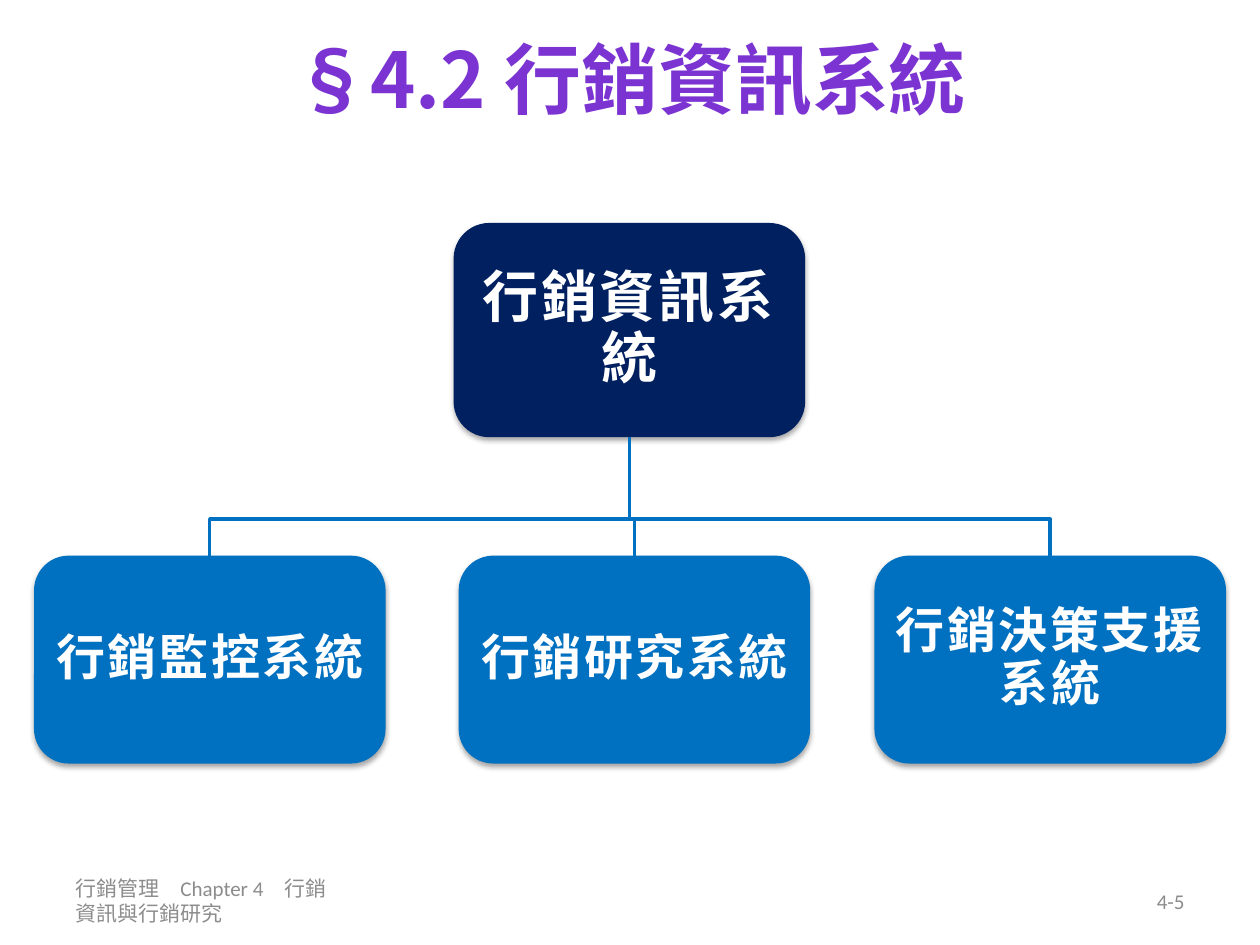
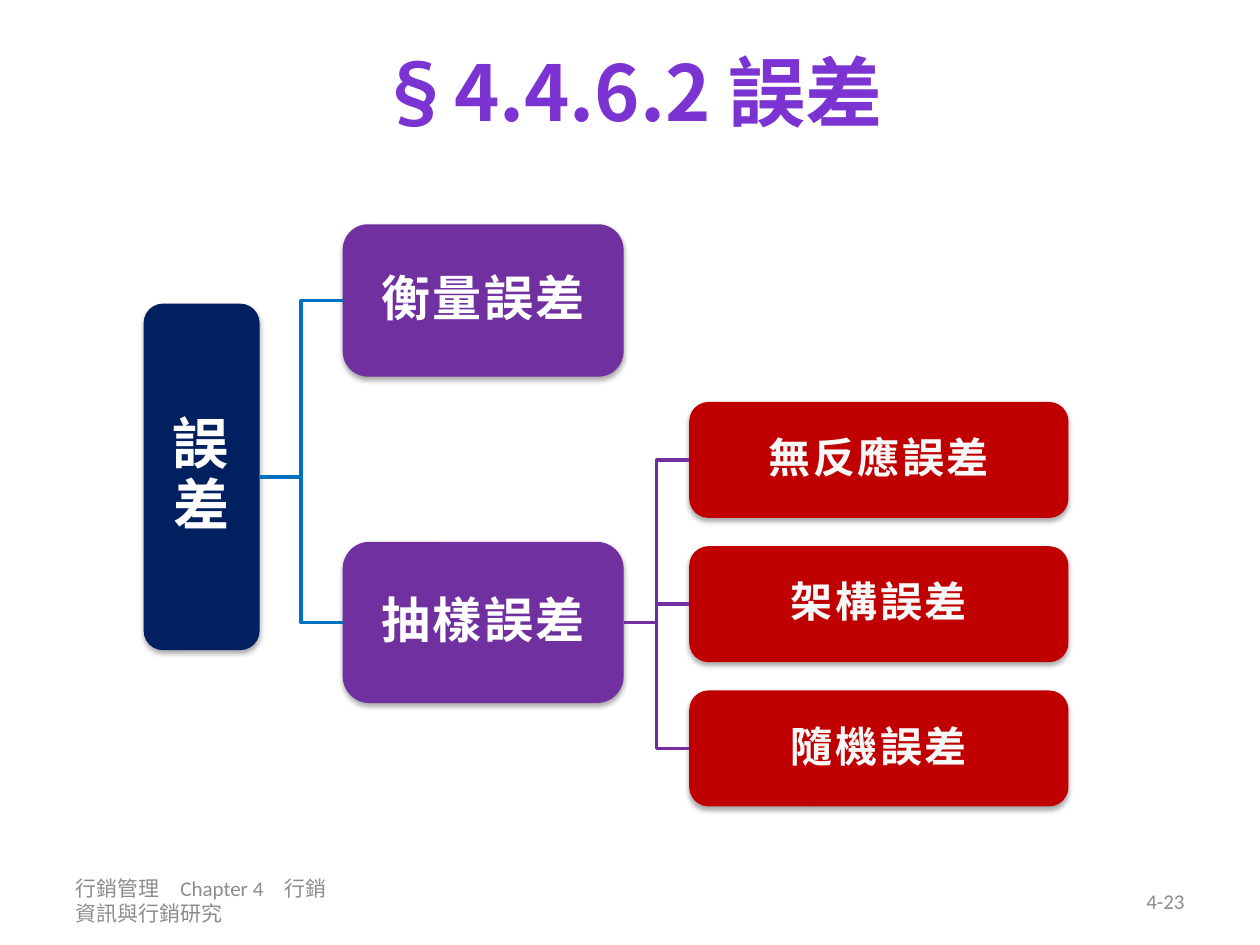
from lxml.etree import SubElement
from pptx import Presentation
from pptx.dml.color import RGBColor
from pptx.enum.shapes import MSO_SHAPE
from pptx.enum.text import MSO_ANCHOR, PP_ALIGN
from pptx.oxml.ns import qn
from pptx.util import Inches, Pt

COLORS = {
    "title": "7B34D2",
    "footer": "8C8C8C",
    "navy": "002060",
    "blue": "0070C0",
    "purple": "7030A0",
    "red": "C00000",
    "white": "FFFFFF",
    "off_white": "F8F8F8",
    "shadow": "000000",
}
CHINESE_FONT = "Noto Sans CJK SC"
FOOTER_TEXT = "行銷管理　Chapter 4　行銷資訊與行銷研究"
FORMATS = {
    "title": {"name": CHINESE_FONT, "size": Pt(44), "bold": True},
    "footer": {"name": "Calibri", "size": Pt(12), "bold": False},
    "box": {"name": CHINESE_FONT, "bold": True},
}
BOX_FRAME = dict.fromkeys(
    ("margin_left", "margin_top", "margin_right", "margin_bottom"), Inches(0.02)
)


def set_attributes(target, values):
    for name, value in values.items():
        setattr(target, name, value)


def color(name):
    return RGBColor.from_string(COLORS[name])


class DiagramDeck:
    def __init__(self):
        self.presentation = Presentation()
        self.presentation.slide_width = Inches(10)
        self.presentation.slide_height = Inches(7.5)
        self.slide = None

    def add_slide(self, title, title_top, title_height, number):
        self.slide = self.presentation.slides.add_slide(
            self.presentation.slide_layouts[6]
        )
        self.text_box(title, 0.5, title_top, 9, title_height, "title", PP_ALIGN.CENTER)
        self.text_box(FOOTER_TEXT, 0.5, 6.95, 2.33, 0.4, "footer", PP_ALIGN.LEFT)
        self.text_box(number, 7.17, 6.95, 2.33, 0.4, "footer", PP_ALIGN.RIGHT)

    def fill_text(self, shape, text, values, color_name, alignment):
        frame = shape.text_frame
        set_attributes(
            frame, {"word_wrap": True, "vertical_anchor": MSO_ANCHOR.MIDDLE}
        )
        paragraph = frame.paragraphs[0]
        paragraph.alignment = alignment
        run = paragraph.add_run()
        run.text = text
        set_attributes(run.font, values)
        run.font.color.rgb = color(color_name)
        properties = run._r.get_or_add_rPr()
        SubElement(properties, qn("a:ea"), typeface=CHINESE_FONT)
        return paragraph, properties

    def text_box(self, text, left, top, width, height, style, alignment):
        shape = self.slide.shapes.add_textbox(
            Inches(left), Inches(top), Inches(width), Inches(height)
        )
        self.fill_text(shape, text, FORMATS[style], style, alignment)

    def box(self, text, left, top, width, height, fill, size, text_color="white"):
        shape = self.slide.shapes.add_shape(
            MSO_SHAPE.ROUNDED_RECTANGLE,
            Inches(left), Inches(top), Inches(width), Inches(height),
        )
        shape.fill.solid()
        shape.fill.fore_color.rgb = color(fill)
        shape.line.fill.background()
        self.soft_shadow(shape)
        set_attributes(shape.text_frame, BOX_FRAME)
        paragraph, properties = self.fill_text(
            shape, text, FORMATS["box"] | {"size": Pt(size)}, text_color, PP_ALIGN.CENTER
        )
        set_attributes(
            paragraph, {"line_spacing": 0.9, "space_after": Pt(size * 0.35)}
        )
        properties.set("spc", "150")
        return shape

    def soft_shadow(self, shape):
        shape.shadow.inherit = False
        effects = shape._element.spPr.find(qn("a:effectLst"))
        shadow = SubElement(
            effects, qn("a:outerShdw"),
            blurRad="40000", dist="23000", dir="5400000", rotWithShape="0",
        )
        shade = SubElement(shadow, qn("a:srgbClr"), val=COLORS["shadow"])
        SubElement(shade, qn("a:alpha"), val="35000")

    def branch(self, points, line_color):
        builder = self.slide.shapes.build_freeform(*points[0])
        builder.add_line_segments(points[1:], close=False)
        shape = builder.convert_to_shape()
        shape.shadow.inherit = False
        shape.fill.background()
        shape.line.color.rgb = color(line_color)
        shape.line.width = Pt(2)

    def branches_down(self, parent, children, line_color, bend):
        start_x = parent.left + parent.width // 2
        start_y = parent.top + parent.height
        for child in children:
            end_x = child.left + child.width // 2
            bend_y = start_y + int((child.top - start_y) * bend)
            self.branch(
                [(start_x, start_y), (start_x, bend_y), (end_x, bend_y), (end_x, child.top)],
                line_color,
            )

    def branches_right(self, parent, children, line_color):
        start_x = parent.left + parent.width
        start_y = parent.top + parent.height // 2
        for child in children:
            end_y = child.top + child.height // 2
            bend_x = (start_x + child.left) // 2
            self.branch(
                [(start_x, start_y), (bend_x, start_y), (bend_x, end_y), (child.left, end_y)],
                line_color,
            )


def information_system_slide(deck):
    deck.add_slide("§4.2 行銷資訊系統", 0, 1.23, "4-5")
    system = deck.box("行銷資訊系統", 3.6, 1.77, 2.79, 1.7, "navy", 32)
    subsystems = [
        deck.box(name, left, 4.41, 2.79, 1.65, "blue", 28)
        for name, left in (
            ("行銷監控系統", 0.27),
            ("行銷研究系統", 3.64),
            ("行銷決策支援系統", 6.94),
        )
    ]
    deck.branches_down(system, subsystems, "blue", 0.69)


def error_slide(deck):
    deck.add_slide("§4.4.6.2 誤差", 0.13, 1.18, "4-23")
    error = deck.box("誤差", 1.14, 2.41, 0.92, 2.75, "navy", 32)
    measurement = deck.box("衡量誤差", 2.72, 1.78, 2.23, 1.21, "purple", 28)
    sampling = deck.box("抽樣誤差", 2.72, 4.3, 2.23, 1.28, "purple", 28)
    sampling_errors = [
        deck.box(name, 5.47, 3.19 + index * 2.29 / 2, 3.01, 0.92, "red", 24, "off_white")
        for index, name in enumerate(("無反應誤差", "架構誤差", "隨機誤差"))
    ]
    deck.branches_right(error, [measurement, sampling], "blue")
    deck.branches_right(sampling, sampling_errors, "purple")


def main():
    deck = DiagramDeck()
    information_system_slide(deck)
    error_slide(deck)
    deck.presentation.save("out.pptx")


if __name__ == "__main__":
    main()
